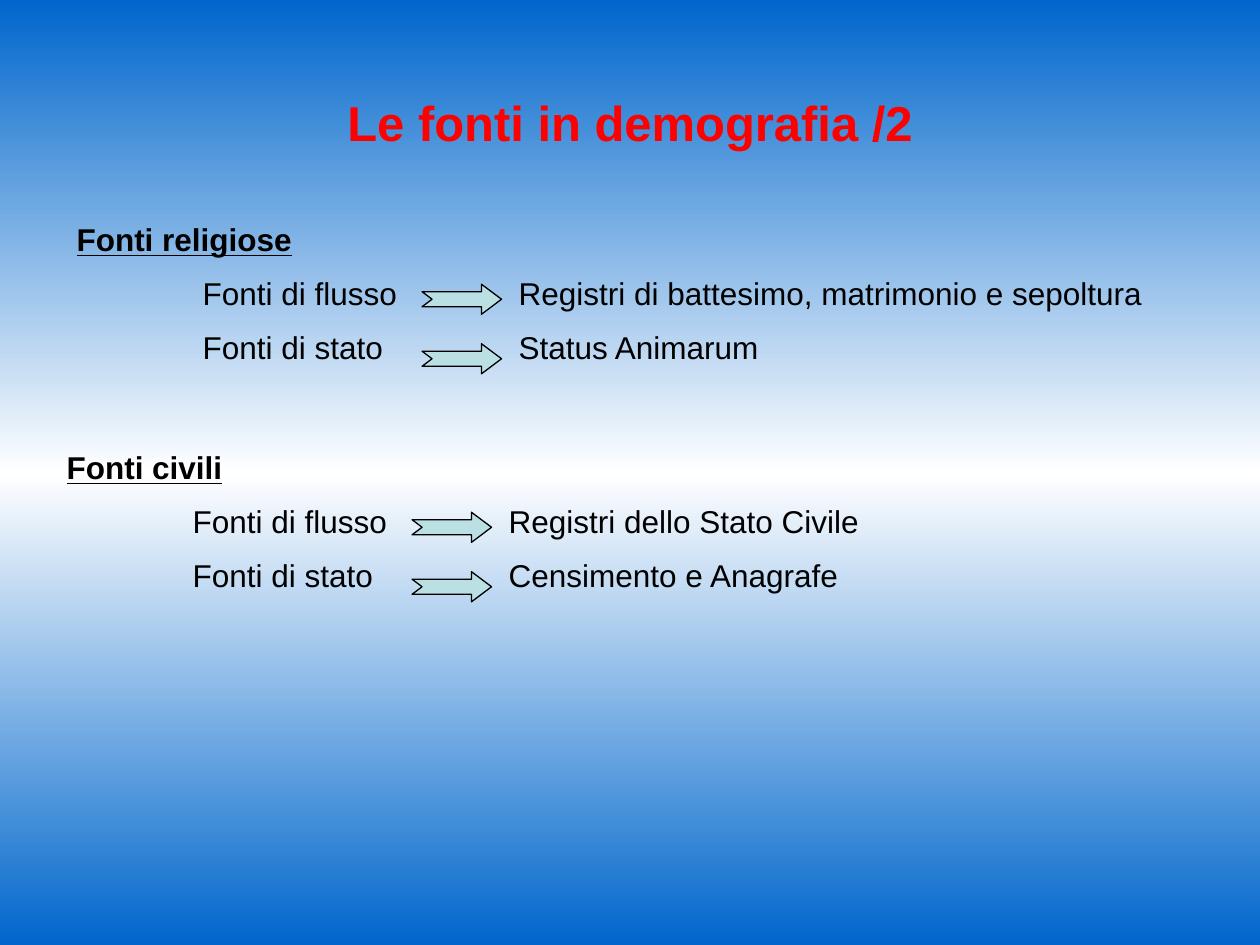
from copy import deepcopy

from lxml import etree
from pptx import Presentation
from pptx.dml.color import RGBColor
from pptx.enum.shapes import MSO_SHAPE
from pptx.enum.text import MSO_ANCHOR, MSO_AUTO_SIZE, PP_ALIGN
from pptx.oxml.ns import qn
from pptx.util import Pt

NOTCHED_ARROW = MSO_SHAPE.NOTCHED_RIGHT_ARROW
TOP, NO_RESIZE = MSO_ANCHOR.TOP, MSO_AUTO_SIZE.NONE
CENTER, LEFT = PP_ALIGN.CENTER, PP_ALIGN.LEFT

TITLE = "Le fonti in demografia /2"
SECTIONS = [
    {
        "heading": "Fonti religiose",
        "at": (36.7, 122.4),
        "sources": [
            ("Fonti di flusso", "Registri di battesimo, matrimonio e sepoltura"),
            ("Fonti di stato", "Status Animarum"),
        ],
    },
    {
        "heading": "Fonti civili",
        "at": (31, 252.7),
        "sources": [
            ("Fonti di flusso", "Registri dello Stato Civile"),
            ("Fonti di stato", "Censimento e Anagrafe"),
        ],
    },
]

THEME = {
    "font": "Arial",
    "title_size": 28,
    "text_size": 18,
    "title": RGBColor(0xFF, 0x00, 0x00),
    "text": RGBColor(0x00, 0x00, 0x00),
    "arrow": RGBColor(0xBB, 0xE0, 0xE3),
    "background": [
        (0, RGBColor(0x00, 0x66, 0xCC)),
        (0.5, RGBColor(0xFF, 0xFF, 0xFF)),
        (1, RGBColor(0x00, 0x66, 0xCC)),
    ],
}

SLIDE_SIZE = (720, 540)
TITLE_BOX = (53.7, 49, 612.7, 41)
SECTION_SIZE = (646.6, 127.4)
TAB_STOPS = (72, 252.6)
INSET_TOP = 3.6
PARAGRAPH_GAP = 9
ARROW_OFFSET = (204.5, 40)
ARROW_PITCH = 34
ARROW_SIZE = (45.4, 17.2)


def paint_background(slide):
    fill = slide.background.fill
    fill.gradient()
    fill.gradient_angle = 270
    stop_list = slide.element.find(".//" + qn("a:gsLst"))
    stop_list.append(deepcopy(stop_list[-1]))
    for stop, (position, color) in zip(fill.gradient_stops, THEME["background"]):
        stop.position = position
        stop.color.rgb = color


def prepare_frame(frame):
    frame.word_wrap = True
    frame.auto_size = NO_RESIZE
    frame.vertical_anchor = TOP
    frame.margin_top = Pt(INSET_TOP)


def style(paragraph, size, color, bold=False, underline=False):
    font = paragraph.font
    font.name = THEME["font"]
    font.size = Pt(size)
    font.color.rgb = color
    font.bold = bold
    font.underline = underline


def set_tab_stops(paragraph):
    tabs = etree.SubElement(paragraph._p.get_or_add_pPr(), qn("a:tabLst"))
    for stop in TAB_STOPS:
        etree.SubElement(tabs, qn("a:tab"), pos=str(Pt(stop)), algn="l")


def add_title(slide):
    title = slide.shapes.title
    title.left, title.top, title.width, title.height = map(Pt, TITLE_BOX)
    prepare_frame(title.text_frame)
    title.text_frame.text = TITLE
    paragraph = title.text_frame.paragraphs[0]
    paragraph.alignment = CENTER
    style(paragraph, THEME["title_size"], THEME["title"], bold=True)


def add_arrow(slide, left, top):
    arrow = slide.shapes.add_shape(
        NOTCHED_ARROW, Pt(left), Pt(top), *map(Pt, ARROW_SIZE)
    )
    arrow.adjustments[0] = 0.5
    arrow.adjustments[1] = 0.667
    arrow.shadow.inherit = False
    arrow.fill.solid()
    arrow.fill.fore_color.rgb = THEME["arrow"]
    arrow.line.color.rgb = THEME["text"]
    arrow.line.width = Pt(0.75)


def add_section(slide, section):
    left, top = section["at"]
    box = slide.shapes.add_textbox(Pt(left), Pt(top), *map(Pt, SECTION_SIZE))
    frame = box.text_frame
    prepare_frame(frame)
    lines = [section["heading"]]
    lines += [f"\t{kind}\t{records}" for kind, records in section["sources"]]
    frame.text = "\n".join(lines)
    for row, paragraph in enumerate(frame.paragraphs):
        is_heading = row == 0
        paragraph.alignment = LEFT
        paragraph.space_before = Pt(0 if is_heading else PARAGRAPH_GAP)
        set_tab_stops(paragraph)
        style(paragraph, THEME["text_size"], THEME["text"], is_heading, is_heading)
    for row in range(len(section["sources"])):
        add_arrow(
            slide, left + ARROW_OFFSET[0], top + ARROW_OFFSET[1] + row * ARROW_PITCH
        )


def main():
    deck = Presentation()
    deck.slide_width, deck.slide_height = map(Pt, SLIDE_SIZE)
    slide = deck.slides.add_slide(deck.slide_layouts.get_by_name("Title Only"))
    paint_background(slide)
    add_title(slide)
    for section in SECTIONS:
        add_section(slide, section)
    deck.save("out.pptx")


if __name__ == "__main__":
    main()
